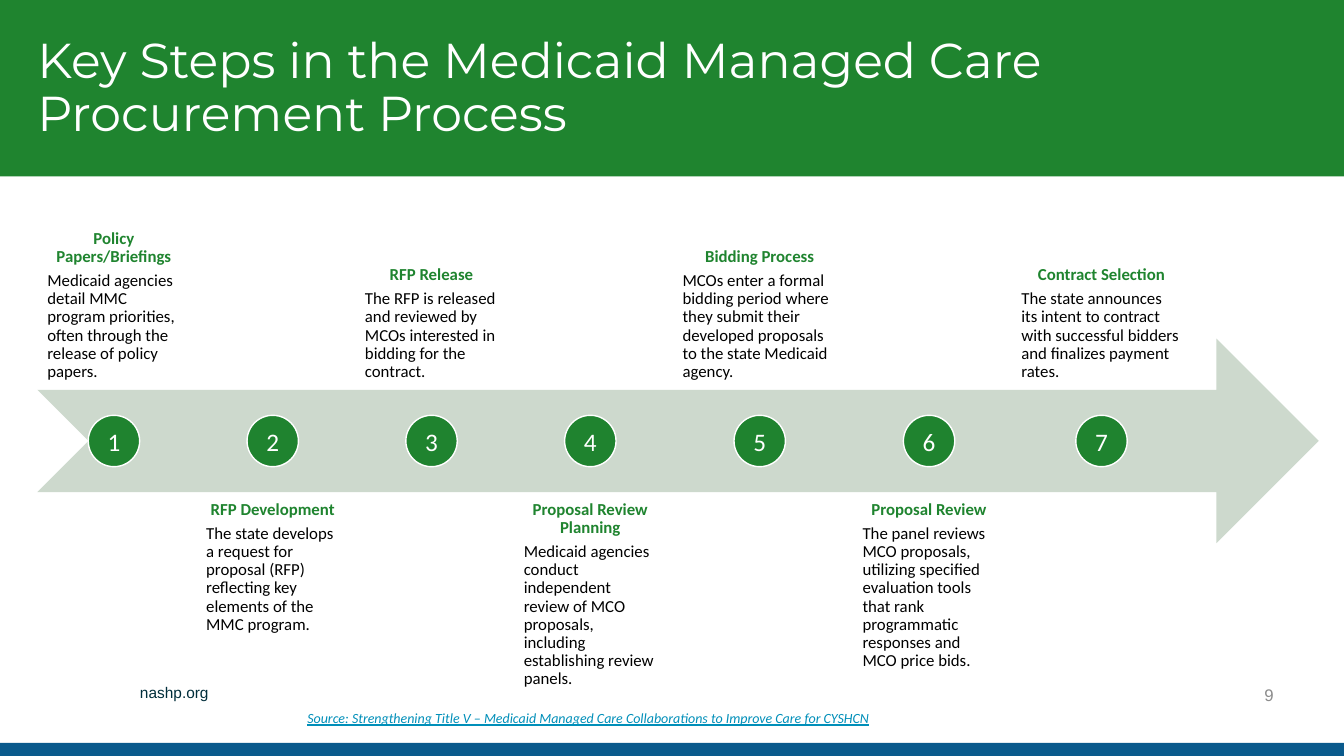
from pptx import Presentation
from pptx.dml.color import RGBColor
from pptx.enum.shapes import MSO_SHAPE as Shape
from pptx.enum.text import MSO_ANCHOR as Anchor, PP_ALIGN as Align
from pptx.util import Inches, Pt

GREEN = RGBColor(0x1F, 0x84, 0x2F)
CIRCLE_GREEN = RGBColor(0x1F, 0x83, 0x2F)
PALE_GREEN = RGBColor(0xCD, 0xD9, 0xCD)
BLUE = RGBColor(0x0A, 0x5A, 0x8C)
LINK_BLUE = RGBColor(0x00, 0x8F, 0xB9)
DARK_TEAL = RGBColor(0x00, 0x2E, 0x3B)
GRAY = RGBColor(0x8C, 0x8C, 0x8C)
BLACK = RGBColor(0, 0, 0)
WHITE = RGBColor(0xFF, 0xFF, 0xFF)

# Heading, description, column width
STEPS = [
    ("Policy Papers/Briefings",
     "Medicaid agencies detail MMC program priorities, often through the release of policy papers.", 1.5),
    ("RFP Development",
     "The state develops a request for proposal (RFP) reflecting key elements of the MMC program.", 1.5),
    ("RFP Release",
     "The RFP is released and reviewed by MCOs interested in bidding for the contract.", 1.5),
    ("Proposal Review Planning",
     "Medicaid agencies conduct independent review of MCO proposals, including establishing review panels.", 1.5),
    ("Bidding Process",
     "MCOs enter a formal bidding period where they submit their developed proposals "
     "to the state Medicaid agency.", 1.71),
    ("Proposal Review",
     "The panel reviews MCO proposals, utilizing specified evaluation tools that rank "
     "programmatic responses and MCO price bids.", 1.5),
    ("Contract Selection",
     "The state announces its intent to contract with successful bidders and finalizes payment rates.", 1.77),
]
COLUMN_GAP = 0.075
CIRCLE_SIZE = 0.51

presentation = Presentation()
presentation.slide_width = Inches(13.33)
presentation.slide_height = Inches(7.5)
slide = presentation.slides.add_slide(presentation.slide_layouts[5])


def add_filled(kind, left, top, width, height, color):
    shape = slide.shapes.add_shape(kind, Inches(left), Inches(top), Inches(width), Inches(height))
    shape.shadow.inherit = False
    shape.fill.solid()
    shape.fill.fore_color.rgb = color
    shape.line.fill.background()
    return shape


def write(paragraph, text, size, name, color):
    paragraph.text = text
    paragraph.font.size = Pt(size)
    paragraph.font.name = name
    paragraph.font.color.rgb = color


# Page bands and title
add_filled(Shape.RECTANGLE, 0, 0, 13.33, 1.75, GREEN)
add_filled(Shape.RECTANGLE, 0, 7.37, 13.33, 0.13, BLUE)

title = slide.shapes.title
slide.shapes._spTree.append(title._element)  # bring the title in front of its band
title.left, title.top = Inches(0.37), Inches(-0.11)
title.width, title.height = Inches(12.69), Inches(1.57)
title_frame = title.text_frame
title_frame.vertical_anchor = Anchor.BOTTOM
title_frame.margin_left = 0
title_paragraph = title_frame.paragraphs[0]
write(title_paragraph, "Key Steps in the Medicaid Managed Care Procurement Process", 35, "Montserrat", WHITE)
title_paragraph.alignment = Align.LEFT
title_paragraph.line_spacing = 0.9

# Timeline: odd steps above the arrow, even steps below
add_filled(Shape.NOTCHED_RIGHT_ARROW, 0.37, 3.36, 12.71, 2.03, PALE_GREEN)

left = 0.38
for number, (heading, description, width) in enumerate(STEPS, start=1):
    above = number % 2 == 1
    step_box = slide.shapes.add_textbox(
        Inches(left), Inches(1.84 if above else 4.88), Inches(width), Inches(2.03))
    frame = step_box.text_frame
    frame.word_wrap = True
    frame.vertical_anchor = Anchor.BOTTOM if above else Anchor.TOP
    frame.margin_left = frame.margin_right = frame.margin_top = frame.margin_bottom = Inches(0.09)
    heading_paragraph = frame.paragraphs[0]
    write(heading_paragraph, heading, 12, "Calibri", GREEN)
    heading_paragraph.font.bold = True
    heading_paragraph.alignment = Align.CENTER
    heading_paragraph.space_after = Pt(4.2)
    write(frame.add_paragraph(), description, 12, "Calibri", BLACK)
    for paragraph in frame.paragraphs:
        paragraph.line_spacing = 0.9

    circle = add_filled(Shape.OVAL, left + (width - CIRCLE_SIZE) / 2, 4.12,
                        CIRCLE_SIZE, CIRCLE_SIZE, CIRCLE_GREEN)
    circle.line.color.rgb = WHITE
    circle.line.width = Pt(1)
    circle_frame = circle.text_frame
    circle_frame.margin_left = circle_frame.margin_right = 0
    circle_frame.margin_top = circle_frame.margin_bottom = 0
    circle_frame.vertical_anchor = Anchor.MIDDLE
    write(circle_frame.paragraphs[0], str(number), 18, "Calibri", WHITE)
    circle_frame.paragraphs[0].alignment = Align.CENTER
    left += width + COLUMN_GAP

# Footer: text, place, size, font, colour, alignment
FOOTERS = [
    ("nashp.org", (1.29, 6.73, 6.27, 0.29), 11, "Arial", DARK_TEAL, Align.LEFT),
    ("9", (9.67, 6.74, 3.06, 0.28), 12, "Arial", GRAY, Align.RIGHT),
    ("Source: Strengthening Title V – Medicaid Managed Care Collaborations to Improve Care for CYSHCN",
     (2.95, 6.99, 9.42, 0.27), 10, "Calibri", LINK_BLUE, Align.LEFT),
]
for text, place, size, name, color, alignment in FOOTERS:
    footer_box = slide.shapes.add_textbox(*map(Inches, place))
    footer_box.text_frame.word_wrap = True
    footer = footer_box.text_frame.paragraphs[0]
    write(footer, text, size, name, color)
    footer.alignment = alignment
    if text.startswith("Source"):
        footer.font.italic = True
        footer.font.underline = True

presentation.save("out.pptx")
